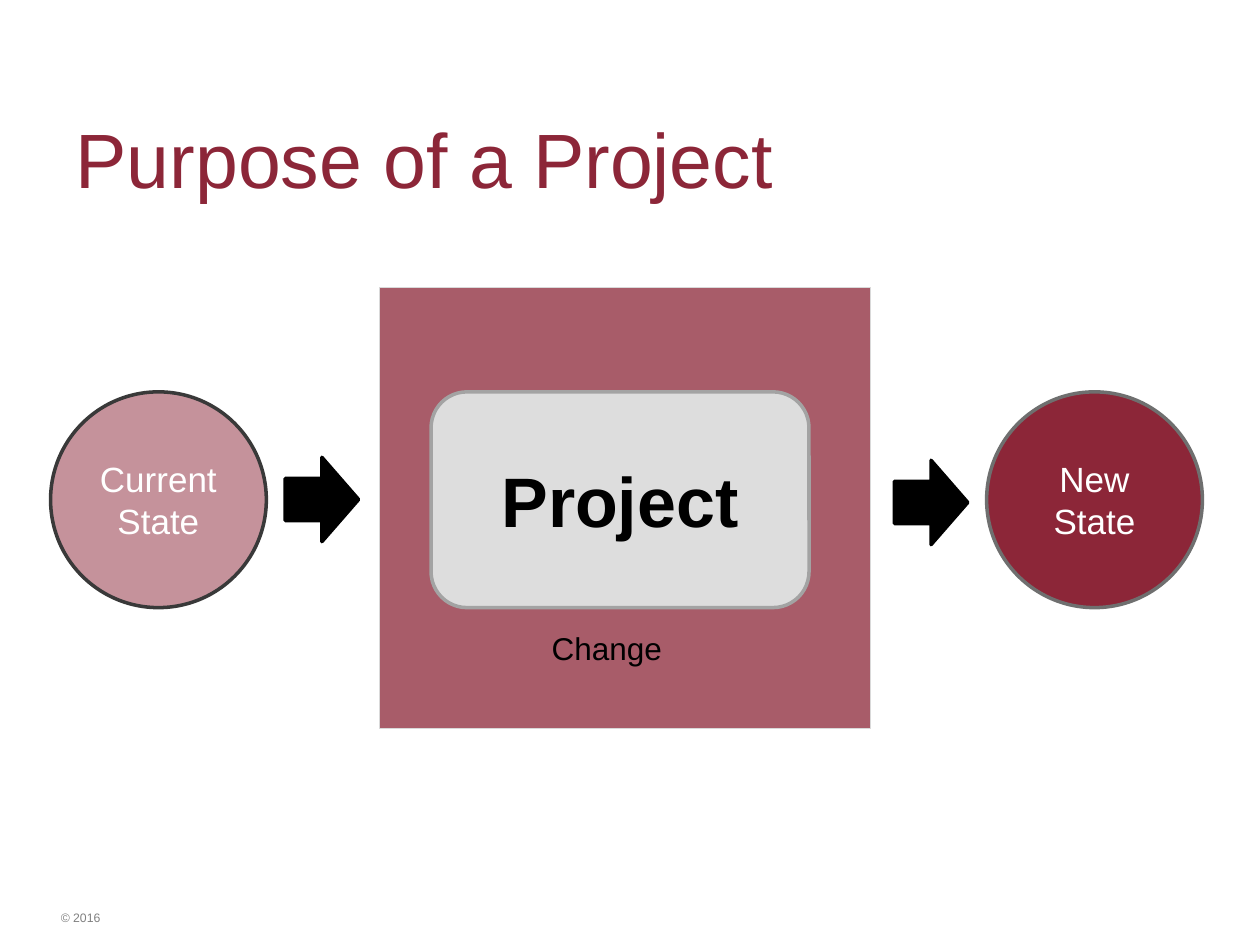
from pptx import Presentation
from pptx.dml.color import RGBColor
from pptx.enum.shapes import MSO_SHAPE
from pptx.enum.text import MSO_ANCHOR, PP_ALIGN
from pptx.oxml.ns import qn
from pptx.util import Cm, Pt
from lxml import etree

RECT, ROUND = MSO_SHAPE.FLOWCHART_PROCESS, MSO_SHAPE.ROUNDED_RECTANGLE
OVAL, ARROW = MSO_SHAPE.OVAL, MSO_SHAPE.RIGHT_ARROW
LEFT, CENTER = PP_ALIGN.LEFT, PP_ALIGN.CENTER
TOP, MIDDLE = MSO_ANCHOR.TOP, MSO_ANCHOR.MIDDLE
HUES = {"wine": "8C2638", "black": "000000", "white": "FFFFFF",
        "pale": "DDDDDD", "rim": "D9D9D9", "edge": "A3A3A3",
        "dark": "393939", "mid": "6F6F6F", "note": "808080"}


class Deck:
    """Hold the style and the current slide, and draw each kind of element."""

    def __init__(self, font):
        self.font = font
        self.prs = Presentation()
        self.prs.slide_width, self.prs.slide_height = Cm(25.4), Cm(19.05)
        self.slide = self.prs.slides.add_slide(self.prs.slide_layouts[5])

    def hue(self, name):
        return RGBColor.from_string(HUES[name])

    def letter(self, shape, text, size, hue, align=CENTER, anchor=MIDDLE, bold=False):
        frame = shape.text_frame
        frame.text = text
        frame.word_wrap = True
        frame.vertical_anchor = anchor
        for para in frame.paragraphs:
            para.alignment = align
            for run in para.runs:
                font = run.font
                font.name, font.size, font.bold = self.font, Pt(size), bold
                font.color.rgb = self.hue(hue)

    def title(self, text, box):
        shape = self.slide.shapes.title
        shape.left, shape.top, shape.width, shape.height = map(Cm, box)
        self.letter(shape, text, 44, "wine", LEFT)

    def label(self, text, box, size, hue, align=LEFT):
        shape = self.slide.shapes.add_textbox(*map(Cm, box))
        self.letter(shape, text, size, hue, align, TOP)

    def shape(self, kind, box, fill, line, width=2, alpha=100):
        shape = self.slide.shapes.add_shape(kind, *map(Cm, box))
        shape.shadow.inherit = False
        shape.fill.solid()
        shape.fill.fore_color.rgb = self.hue(fill)
        shape.line.color.rgb = self.hue(line)
        shape.line.width = Pt(width)
        if alpha < 100:
            color = shape.element.spPr.find(qn("a:solidFill"))[0]
            etree.SubElement(color, qn("a:alpha")).set("val", str(alpha * 1000))
        return shape

    def state(self, text, left, line, alpha=100):
        shape = self.shape(OVAL, (left, 7.9, 4.35, 4.35), "wine", line, alpha=alpha)
        self.letter(shape, text, 20, "white")

    def arrow(self, left, top):
        self.shape(ARROW, (left, top, 1.48, 1.7), "black", "black")


def main():
    deck = Deck("Arial")
    deck.label("© 2016", (0.66, 18.23, 1.93, 0.56), 7, "note", CENTER)
    deck.title("Purpose of a Project", (1.27, 1.95, 22.86, 2.47))
    deck.shape(RECT, (7.65, 5.8, 9.9, 8.88), "wine", "rim", 0.75, 75)
    core = deck.shape(ROUND, (8.69, 7.9, 7.62, 4.35), "pale", "edge")
    deck.letter(core, "Project", 40, "black", bold=True)
    deck.state("Current\nState", 1.02, "dark", 50)
    deck.state("New\nState", 19.89, "mid")
    deck.arrow(5.75, 9.22)
    deck.arrow(18.03, 9.28)
    deck.label("Change", (10.87, 12.55, 3.5, 1.27), 18, "black")
    deck.prs.save("out.pptx")


if __name__ == "__main__":
    main()
